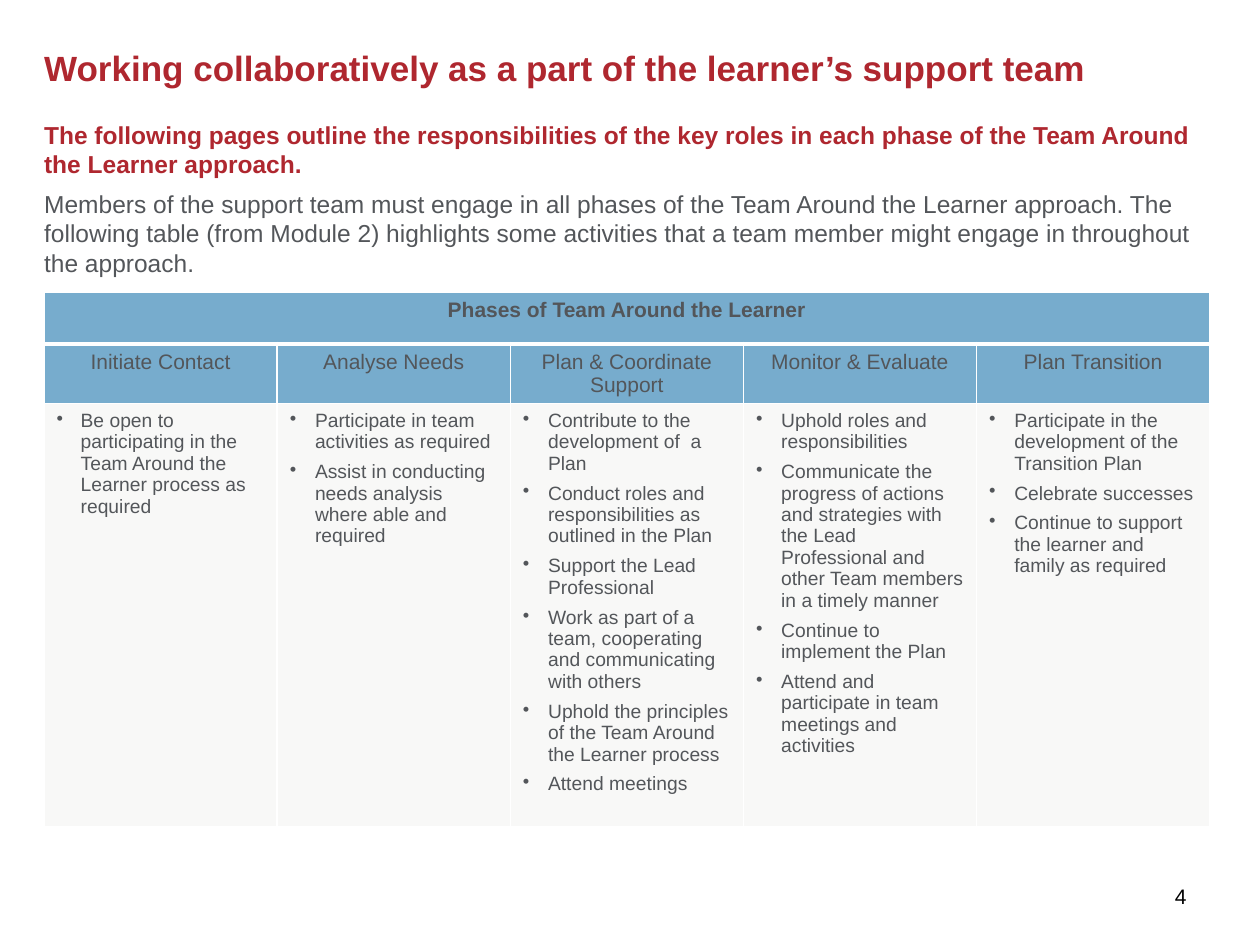
from lxml import etree
from pptx import Presentation
from pptx.dml.color import RGBColor
from pptx.enum.text import MSO_ANCHOR, MSO_AUTO_SIZE, PP_ALIGN
from pptx.oxml.ns import qn
from pptx.util import Inches, Pt

RED = RGBColor(0xAF, 0x27, 0x2F)
GREY = RGBColor(0x53, 0x56, 0x5A)
BLUE = RGBColor(0x77, 0xAC, 0xCD)
PALE = RGBColor(0xF8, 0xF8, 0xF7)
WHITE = RGBColor(0xFF, 0xFF, 0xFF)
BLACK = RGBColor(0, 0, 0)
CENTER, LEFT = PP_ALIGN.CENTER, PP_ALIGN.LEFT
TOP, MIDDLE = MSO_ANCHOR.TOP, MSO_ANCHOR.MIDDLE
NO_AUTOFIT = MSO_AUTO_SIZE.NONE

MARGIN, CONTENT_WIDTH = 0.35, 9.25
ROW_HEIGHTS = [0.41, 0.47, 3.36]

INTRODUCTION = [
    ("The following pages outline the responsibilities of the key roles in each "
     "phase of the Team Around the Learner approach.", RED, True),
    ("Members of the support team must engage in all phases of the Team Around "
     "the Learner approach. The following table (from Module 2) highlights some "
     "activities that a team member might engage in throughout the approach.",
     GREY, False),
]
PHASES = {
    "Initiate Contact": [
        "Be open to participating in the Team Around the Learner process as required",
    ],
    "Analyse Needs": [
        "Participate in team activities as required",
        "Assist in conducting needs analysis where able and required",
    ],
    "Plan & Coordinate Support": [
        "Contribute to the development of  a Plan",
        "Conduct roles and responsibilities as outlined in the Plan",
        "Support the Lead Professional",
        "Work as part of a team, cooperating and communicating with others",
        "Uphold the principles of the Team Around the Learner process",
        "Attend meetings",
    ],
    "Monitor & Evaluate": [
        "Uphold roles and responsibilities",
        "Communicate the progress of actions and strategies with the Lead "
        "Professional and other Team members in a timely manner",
        "Continue to implement the Plan",
        "Attend and participate in team meetings and activities",
    ],
    "Plan Transition": [
        "Participate in the development of the Transition Plan",
        "Celebrate successes",
        "Continue to support the learner and family as required",
    ],
}


def add_text(frame, index, text, size, color, bold=False, align=LEFT, gap=0):
    """Write one paragraph; gap is the spacing in points before and after."""
    paragraph = frame.add_paragraph() if index else frame.paragraphs[0]
    paragraph.alignment = align
    if gap:
        paragraph.space_before = Pt(gap if index else 0)
        paragraph.space_after = Pt(gap)
    run = paragraph.add_run()
    run.text = text
    run.font.name = "Arial"
    run.font.size = Pt(size)
    run.font.bold = bold
    run.font.color.rgb = color
    return paragraph


def set_frame(frame, anchor):
    frame.word_wrap = True
    frame.auto_size = NO_AUTOFIT
    frame.vertical_anchor = anchor
    frame.margin_left = frame.margin_right = 0
    frame.margin_top = frame.margin_bottom = 0


presentation = Presentation()
presentation.slide_width = Inches(10)
presentation.slide_height = Inches(7.5)
slide = presentation.slides.add_slide(presentation.slide_layouts[5])

# Title
title = slide.shapes.title
title.left, title.top = Inches(MARGIN), Inches(0.41)
title.width, title.height = Inches(CONTENT_WIDTH), Inches(0.5)
set_frame(title.text_frame, TOP)
heading = add_text(
    title.text_frame, 0,
    "Working collaboratively as a part of the learner’s support team", 20, RED, True)
heading.line_spacing = 0.9

# Introduction
introduction = slide.shapes.add_textbox(
    Inches(MARGIN), Inches(0.95), Inches(CONTENT_WIDTH), Inches(1.3))
set_frame(introduction.text_frame, TOP)
for index, (text, color, bold) in enumerate(INTRODUCTION):
    add_text(introduction.text_frame, index, text, 14, color, bold, gap=3)

# Table of phases
table = slide.shapes.add_table(
    len(ROW_HEIGHTS), len(PHASES), Inches(MARGIN), Inches(2.32),
    Inches(CONTENT_WIDTH), Inches(sum(ROW_HEIGHTS))).table
for row, height in zip(table.rows, ROW_HEIGHTS):
    row.height = Inches(height)
for column in table.columns:
    column.width = Inches(CONTENT_WIDTH / len(PHASES))

banner = table.cell(0, 0)
banner.merge(table.cell(0, len(PHASES) - 1))
add_text(banner.text_frame, 0, "Phases of Team Around the Learner", 12, GREY, True, CENTER)

for column_index, (phase, activities) in enumerate(PHASES.items()):
    add_text(table.cell(1, column_index).text_frame, 0, phase, 12, GREY, align=CENTER)
    activity_frame = table.cell(2, column_index).text_frame
    for index, activity in enumerate(activities):
        paragraph = add_text(activity_frame, index, activity, 11, GREY, gap=2.4)
        indent = Inches(0.2 if column_index else 0.19)
        properties = paragraph._p.get_or_add_pPr()
        properties.set("marL", str(indent))
        properties.set("indent", str(-indent))
        etree.SubElement(properties, qn("a:buChar"), char="•")

# Cell fills and white borders, heavier under the banner
for row_index, row in enumerate(table.rows):
    for cell in row.cells:
        cell.fill.solid()
        cell.fill.fore_color.rgb = PALE if row_index == 2 else BLUE
        weights = {"L": 1, "R": 1, "T": 3 if row_index == 1 else 1,
                   "B": 3 if row_index == 0 else 1}
        cell_properties = cell._tc.get_or_add_tcPr()
        for position, (side, weight) in enumerate(weights.items()):
            border = etree.Element(qn(f"a:ln{side}"), w=str(Pt(weight)))
            solid = etree.SubElement(border, qn("a:solidFill"))
            etree.SubElement(solid, qn("a:srgbClr"), val=str(WHITE))
            cell_properties.insert(position, border)

# Page number
page_number = slide.shapes.add_textbox(
    Inches(9.13), Inches(6.91), Inches(0.48), Inches(0.4))
set_frame(page_number.text_frame, MIDDLE)
add_text(page_number.text_frame, 0, "4", 12, BLACK, align=CENTER)

presentation.save("out.pptx")
